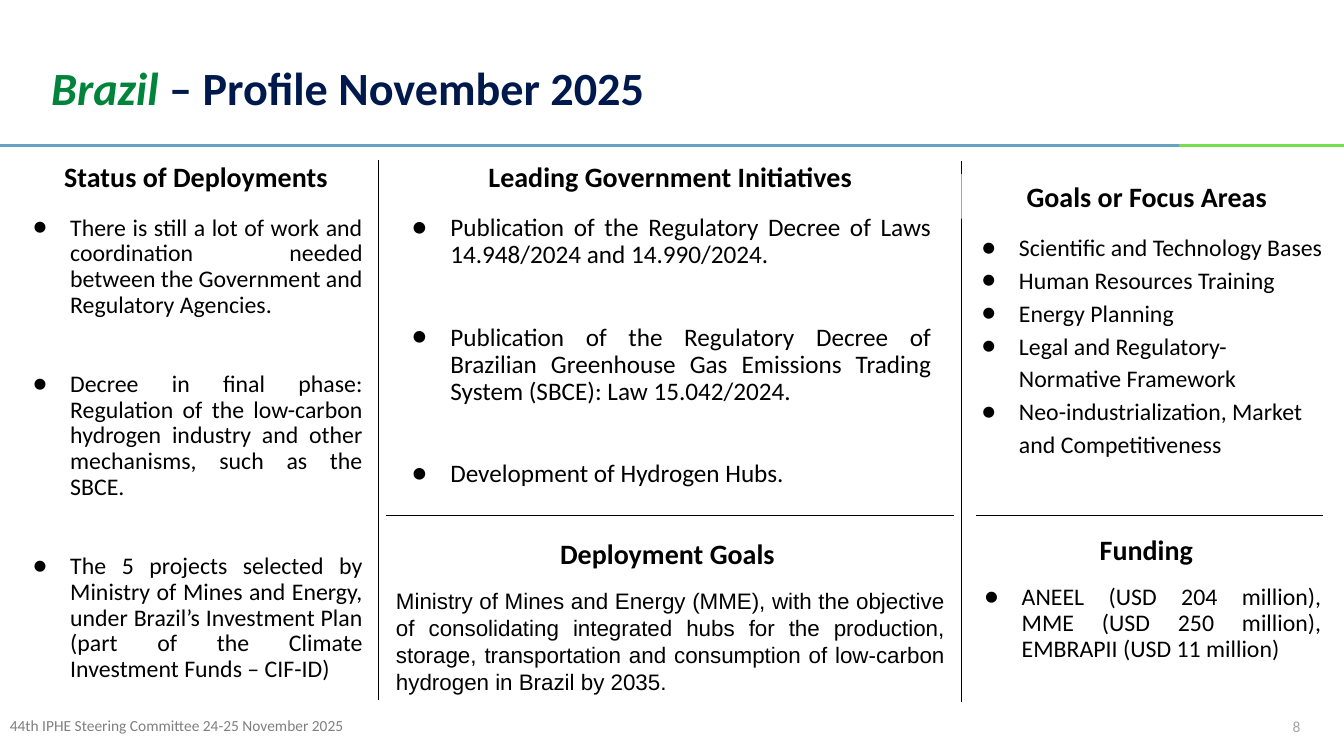
from lxml import etree
from pptx import Presentation
from pptx.dml.color import RGBColor
from pptx.enum.shapes import MSO_CONNECTOR, MSO_SHAPE
from pptx.enum.text import MSO_ANCHOR as Anchor, PP_ALIGN as Align
from pptx.oxml.ns import qn
from pptx.util import Cm, Pt

# Content: positions are left, top, width, height in cm
TITLE = [
    ("Brazil", {"color": "00843B", "italic": True}),
    (" – Profile November 2025", {"color": "00194C"}),
]
HEADINGS = [
    ("Status of Deployments ", (1.17, 3.89, 7.7), None),
    ("Leading Government Initiatives", (10.87, 3.89, 12.04), "FFFFFF"),
    ("Deployment Goals", (11.51, 13.39, 10.62), "FFFFFF"),
    ("Goals or Focus Areas ", (24.23, 4.39, 9.5), "FFFFFF"),
    ("Funding ", (25.02, 13.28, 7.9), "FFFFFF"),
]
HEADING_HEIGHT = 1.12

# Each list: place, size, hanging indent in cm, gap in pt, line spacing, alignment, items
LISTS = [
    ((0.25, 5.18, 9.14, 12.37), 17, 0.94, 38.3, 0.9, Align.JUSTIFY, [
        "There is still a lot of work and coordination needed between the "
        "Government and Regulatory Agencies.",
        "Decree in final phase: Regulation of the low-carbon hydrogen industry "
        "and other mechanisms, such as the SBCE.",
        "The 5 projects selected by Ministry of Mines and Energy, under Brazil’s "
        "Investment Plan (part of the Climate Investment Funds – CIF-ID)",
    ]),
    ((9.83, 5.16, 13.89, 7.44), 18, 0.97, 39.4, 0.9, Align.JUSTIFY, [
        "Publication of the Regulatory Decree of Laws 14.948/2024 and 14.990/2024.",
        "Publication of the Regulatory Decree of Brazilian Greenhouse Gas "
        "Emissions Trading System (SBCE): Law 15.042/2024.",
        "Development of Hydrogen Hubs.",
    ]),
    ((24.16, 5.51, 9.47, 7.54), 17, 0.94, 0, 1.15, Align.LEFT, [
        "Scientific and Technology Bases",
        "Human Resources Training",
        "Energy Planning",
        "Legal and Regulatory-Normative Framework",
        "Neo-industrialization, Market and Competitiveness",
    ]),
    ((24.23, 14.5, 9.32, 2.46), 17, 0.94, 0, 0.9, Align.JUSTIFY, [
        "ANEEL (USD 204 million), MME (USD 250 million), EMBRAPII (USD 11 million)",
    ]),
]
DEPLOYMENT_GOALS = (
    "Ministry of Mines and Energy (MME), with the objective of consolidating "
    "integrated hubs for the production, storage, transportation and consumption "
    "of low-carbon hydrogen in Brazil by 2035."
)
FOOTER = "44th IPHE Steering Committee 24-25 November 2025"
PAGE_NUMBER = "8"

# Lines: start x, start y, end x, end y, colour, width in pt
LINES = [
    (29.72, 3.66, 33.87, 3.66, "73DF4D", 2.5),
    (0, 3.66, 29.72, 3.66, "66A3C2", 2.5),
    (9.55, 4.04, 9.55, 17.65, "000000", 0.75),
    (24.23, 4.06, 24.23, 17.7, "000000", 0.75),
    (9.73, 13, 24.05, 13, "000000", 0.75),
    (24.59, 13, 33.35, 13, "000000", 0.75),
]
TEXT_INDENT = 1.27

deck = Presentation()
deck.slide_width, deck.slide_height = Cm(33.87), Cm(19.05)
page = deck.slides.add_slide(deck.slide_layouts[6])


def color(value):
    return RGBColor.from_string(value)


def apply(target, values):
    for name, value in values.items():
        setattr(target, name, value)


def add_line(x1, y1, x2, y2, stroke, width):
    line = page.shapes.add_connector(
        MSO_CONNECTOR.STRAIGHT, Cm(x1), Cm(y1), Cm(x2), Cm(y2))
    line.line.color.rgb = color(stroke)
    line.line.width = Pt(width)
    etree.SubElement(line._element.spPr, qn("a:effectLst"))


def add_box(place, fill=None, anchor=Anchor.TOP, top=0.25, bottom=0.25):
    lengths = [Cm(length) for length in place]
    if fill:
        box = page.shapes.add_shape(MSO_SHAPE.RECTANGLE, *lengths)
        box.shadow.inherit = False
        box.fill.solid()
        box.fill.fore_color.rgb = color(fill)
        box.line.fill.background()
    else:
        box = page.shapes.add_textbox(*lengths)
    apply(box.text_frame, {
        "word_wrap": True, "vertical_anchor": anchor,
        "margin_left": Cm(0.25), "margin_right": Cm(0.25),
        "margin_top": Cm(top), "margin_bottom": Cm(bottom),
    })
    return box.text_frame


def write(para, text, size, color_hex="000000", face="Calibri", **style):
    span = para.add_run()
    span.text = text
    apply(span.font, {"size": Pt(size), "name": face, **style})
    span.font.color.rgb = color(color_hex)


def add_bullet(para, hanging):
    props = para._p.get_or_add_pPr()
    props.set("marL", str(Cm(TEXT_INDENT)))
    props.set("indent", str(-Cm(hanging)))
    tint = etree.SubElement(props, qn("a:buClr"))
    etree.SubElement(tint, qn("a:srgbClr"), val="000000")
    etree.SubElement(props, qn("a:buFont"), typeface="Calibri")
    etree.SubElement(props, qn("a:buChar"), char="●")


def add_label(text, place, size, align, style=None, **frame_options):
    para = add_box(place, **frame_options).paragraphs[0]
    para.alignment = align
    write(para, text, size, **(style or {}))


# Rules and column dividers
for line_values in LINES:
    add_line(*line_values)

# Title
title = add_box((1.04, 0.71, 28.42, 3), anchor=Anchor.MIDDLE, top=0.13, bottom=0)
title_para = title.paragraphs[0]
title_para.line_spacing = 0.9
for text, look in TITLE:
    write(title_para, text, 33, look["color"], bold=True,
          italic=look.get("italic", False))

# Section headings
for text, place, fill in HEADINGS:
    add_label(text, (*place, HEADING_HEIGHT), 20, Align.CENTER, {"bold": True},
              fill=fill, top=0.13, bottom=0.13)

# Bulleted lists
for place, size, hanging, gap, spacing, align, items in LISTS:
    frame = add_box(place)
    for index, item in enumerate(items):
        para = frame.add_paragraph() if index else frame.paragraphs[0]
        add_bullet(para, hanging)
        apply(para, {"alignment": align, "line_spacing": spacing,
                     "space_before": Pt(gap if index else 0)})
        write(para, item, size)

# Deployment goals
add_label(DEPLOYMENT_GOALS, (9.73, 14.55, 14.33, 3.25), 16, Align.JUSTIFY,
          {"face": "Arial"})

# Footer and page number
for text, place, align, tint in [
    (FOOTER, (0, 17.88, 9.4, 0.76), Align.LEFT, "7F7F7F"),
    (PAGE_NUMBER, (30.96, 17.65, 2.06, 1.02), Align.RIGHT, "A5A5A5"),
]:
    add_label(text, place, 11, align, {"color_hex": tint},
              anchor=Anchor.BOTTOM, top=0.13, bottom=0.13)

deck.save("out.pptx")
